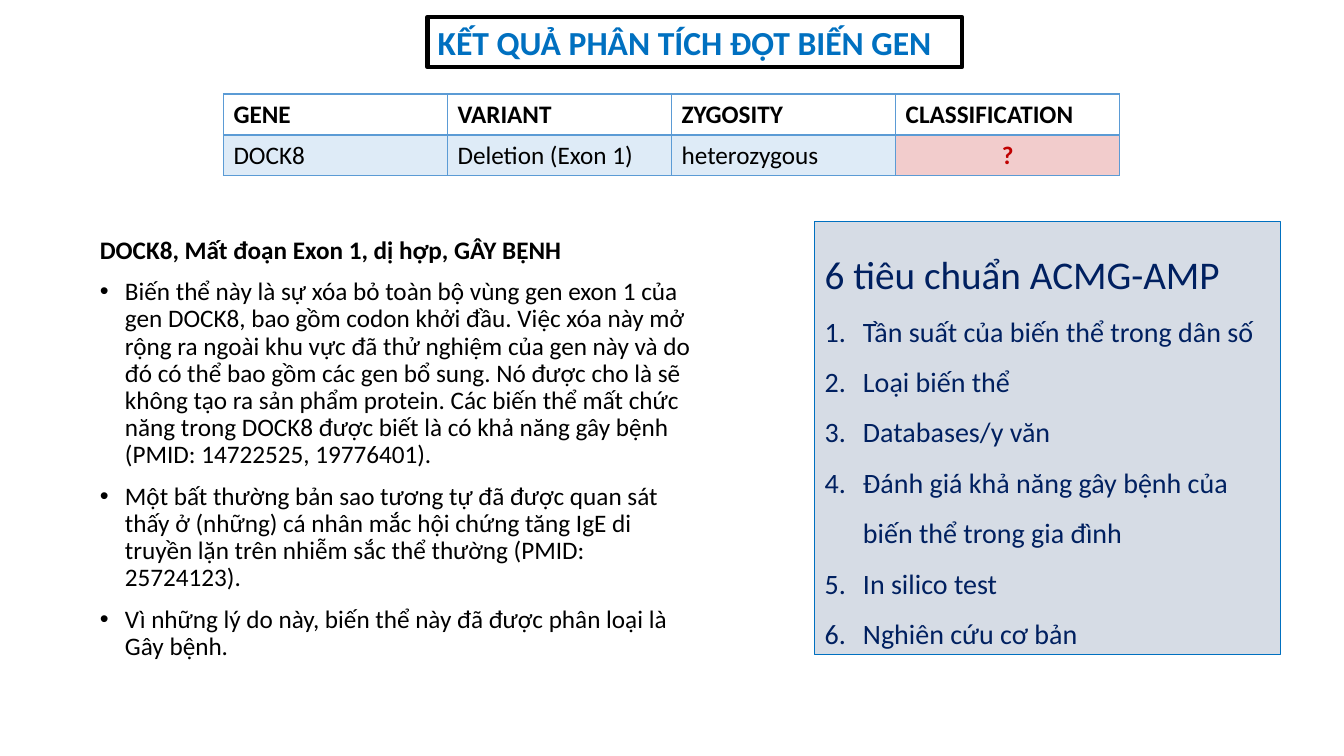
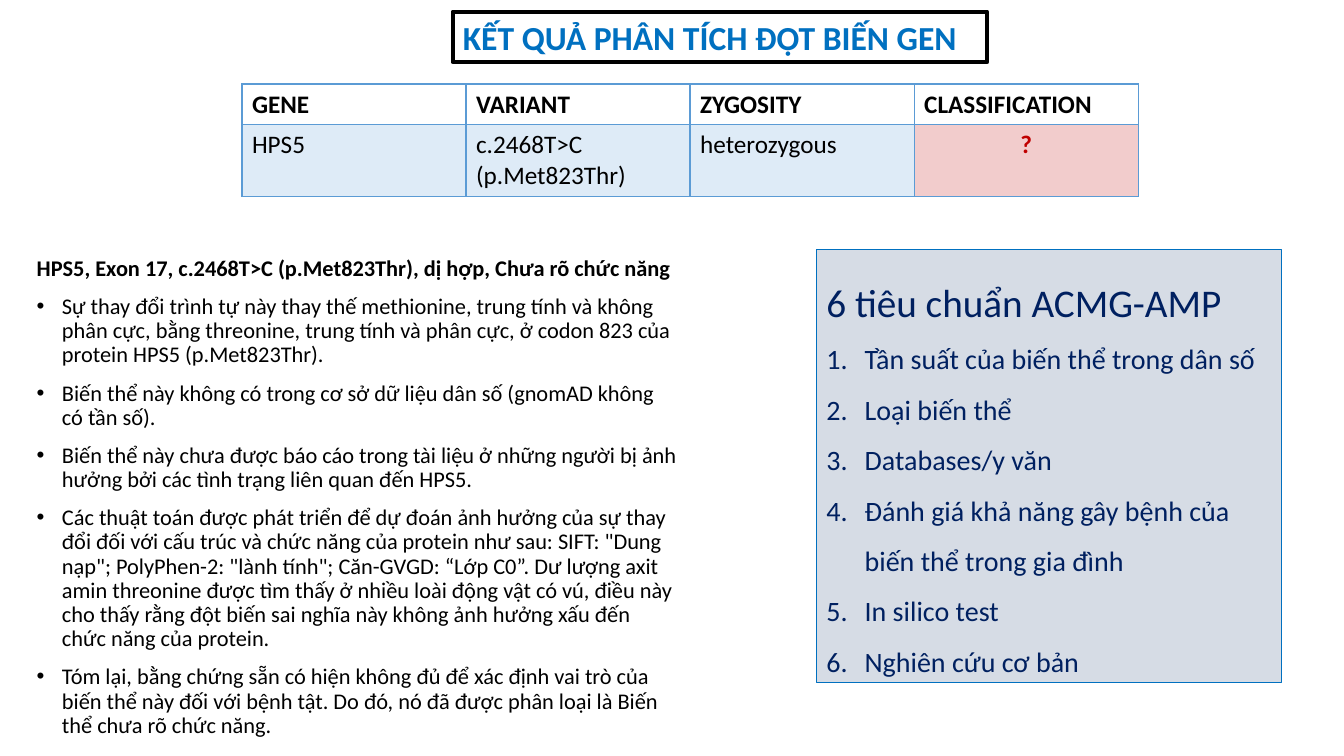
import pptx
import pptx.util
import pptx.dml.color
import pptx.enum.shapes
import pptx.enum.text
import pptx.oxml.ns
import lxml.etree

RGBColor = pptx.dml.color.RGBColor
BLACK = RGBColor(0x00, 0x00, 0x00)
BLUE = RGBColor(0x00, 0x70, 0xC0)
NAVY = RGBColor(0x00, 0x20, 0x60)
RED = RGBColor(0xC0, 0x00, 0x00)
EDGE = RGBColor(0x5B, 0x9B, 0xD5)
PALE = RGBColor(0xDE, 0xEB, 0xF7)
PINK = RGBColor(0xF2, 0xCC, 0xCC)
GREY = RGBColor(0xD6, 0xDC, 0xE5)
FONT = "Calibri"
ALIGN = pptx.enum.text.PP_ALIGN
FIT = pptx.enum.text.MSO_AUTO_SIZE
TOP = pptx.enum.text.MSO_ANCHOR.TOP

WIDE, HIGH = pptx.util.Inches(13.333), pptx.util.Inches(7.5)
COLS, ROWS = 16, 9

TITLE = "KẾT QUẢ PHÂN TÍCH ĐỘT BIẾN GEN"
HEADS = ["GENE", "VARIANT", "ZYGOSITY", "CLASSIFICATION"]
RULES = "6 tiêu chuẩn ACMG-AMP"
TESTS = [
    "Tần suất của biến thể trong dân số",
    "Loại biến thể",
    "Databases/y văn",
    "Đánh giá khả năng gây bệnh của biến thể trong gia đình",
    "In silico test",
    "Nghiên cứu cơ bản",
]
DOCK = {
    "title": (5.09, 0.2),
    "table": (2.66, 1.12),
    "rows": (0.48, 0.48),
    "cells": ["DOCK8", "Deletion (Exon 1)", "heterozygous", "?"],
    "body": (1.07, 2.77, 7.31, 5.71),
    "size": 18,
    "lead": 0.9,
    "panel": (9.7, 2.64),
    "head": "DOCK8, Mất đoạn Exon 1, dị hợp, GÂY BỆNH",
    "notes": [
        "Biến thể này là sự xóa bỏ toàn bộ vùng gen exon 1 của gen DOCK8, bao gồm codon khởi đầu. "
        "Việc xóa này mở rộng ra ngoài khu vực đã thử nghiệm của gen này và do đó có thể bao gồm "
        "các gen bổ sung. Nó được cho là sẽ không tạo ra sản phẩm protein. Các biến thể mất chức "
        "năng trong DOCK8 được biết là có khả năng gây bệnh (PMID: 14722525, 19776401).",
        "Một bất thường bản sao tương tự đã được quan sát thấy ở (những) cá nhân mắc hội chứng "
        "tăng IgE di truyền lặn trên nhiễm sắc thể thường (PMID: 25724123).",
        "Vì những lý do này, biến thể này đã được phân loại là Gây bệnh.",
    ],
}
HPS = {
    "title": (5.39, 0.14),
    "table": (2.88, 1),
    "rows": (0.48, 0.84),
    "cells": ["HPS5", "c.2468T>C (p.Met823Thr)", "heterozygous", "?"],
    "body": (0.32, 2.97, 7.87, 5.71),
    "size": 16,
    "lead": 1.0,
    "panel": (9.72, 2.97),
    "head": "HPS5, Exon 17, c.2468T>C (p.Met823Thr), dị hợp, Chưa rõ chức năng",
    "notes": [
        "Sự thay đổi trình tự này thay thế methionine, trung tính và không phân cực, bằng "
        "threonine, trung tính và phân cực, ở codon 823 của protein HPS5 (p.Met823Thr).",
        "Biến thể này không có trong cơ sở dữ liệu dân số (gnomAD không có tần số).",
        "Biến thể này chưa được báo cáo trong tài liệu ở những người bị ảnh hưởng bởi các tình "
        "trạng liên quan đến HPS5.",
        "Các thuật toán được phát triển để dự đoán ảnh hưởng của sự thay đổi đối với cấu trúc và "
        "chức năng của protein như sau: SIFT: \"Dung nạp\"; PolyPhen-2: \"lành tính\"; Căn-GVGD: "
        "“Lớp C0”. Dư lượng axit amin threonine được tìm thấy ở nhiều loài động vật có vú, điều "
        "này cho thấy rằng đột biến sai nghĩa này không ảnh hưởng xấu đến chức năng của protein.",
        "Tóm lại, bằng chứng sẵn có hiện không đủ để xác định vai trò của biến thể này đối với "
        "bệnh tật. Do đó, nó đã được phân loại là Biến thể chưa rõ chức năng.",
    ],
}


def grid(left, top, cols, rows):
    """Turn columns and rows of the grid into slide lengths."""
    across, down = WIDE / COLS, HIGH / ROWS
    return [int(n) for n in (left * across, top * down, cols * across, rows * down)]


def node(base, tag, **attrs):
    """Add a drawing element with its attributes."""
    return lxml.etree.SubElement(base, pptx.oxml.ns.qn(tag), **attrs)


def write(frame, text, size=18, color=BLACK, bold=False, align=ALIGN.LEFT,
          lead=1.0, before=0, mark=None, indent=0.25):
    """Write one paragraph in the given format."""
    para = frame.paragraphs[-1]
    if para.runs:
        para = frame.add_paragraph()
    para.alignment = align
    para.line_spacing = lead
    para.space_before = pptx.util.Pt(before)
    run = para.add_run()
    run.text = text
    font = run.font
    font.name, font.size, font.bold = FONT, pptx.util.Pt(size), bold
    font.color.rgb = color
    if mark:
        props = para._p.get_or_add_pPr()
        step = pptx.util.Inches(indent)
        props.set("marL", str(step))
        props.set("indent", str(-step))
        if mark == "1.":
            node(props, "a:buFont", typeface="+mj-lt")
            node(props, "a:buAutoNum", type="arabicPeriod")
        else:
            node(props, "a:buFont", typeface="Arial")
            node(props, "a:buChar", char=mark)


def title(slide, spot):
    """Place and frame the slide title."""
    shape = slide.shapes.title
    shape.left, shape.top, shape.width, shape.height = grid(*spot, 6.36, 0.6)
    shape.line.color.rgb = BLACK
    shape.line.width = pptx.util.Pt(3)
    frame = shape.text_frame
    frame.word_wrap, frame.auto_size = True, FIT.NONE
    frame.vertical_anchor = TOP
    write(frame, TITLE, size=24, color=BLUE, bold=True)


def border(cell):
    """Draw a thin line on each side of a cell."""
    props = cell._tc.get_or_add_tcPr()
    for side in "LRTB":
        line = node(props, "a:ln" + side, w=str(pptx.util.Pt(1)))
        fill = node(line, "a:solidFill")
        node(fill, "a:srgbClr", val=str(EDGE))


def table(slide, spot, rows, cells):
    """Add the table of the gene and its variant."""
    box = grid(*spot, 10.67, sum(rows))
    grille = slide.shapes.add_table(2, len(HEADS), *box).table
    grille.first_row = grille.horz_banding = False
    for r, line in enumerate((HEADS, cells)):
        grille.rows[r].height = grid(0, 0, 0, rows[r])[3]
        for c, text in enumerate(line):
            cell = grille.cell(r, c)
            border(cell)
            if r == 0:
                cell.fill.background()
                write(cell.text_frame, text, bold=True)
                continue
            ask = text == "?"
            cell.fill.solid()
            cell.fill.fore_color.rgb = PINK if ask else PALE
            write(cell.text_frame, text, color=RED if ask else BLACK, bold=ask,
                  align=ALIGN.CENTER if ask else ALIGN.LEFT)


def body(slide, spot, head, notes, size, lead):
    """Add the finding with its bullets."""
    frame = slide.shapes.add_textbox(*grid(*spot)).text_frame
    frame.word_wrap = True
    write(frame, head, size=size, bold=True, lead=lead, before=10)
    for note in notes:
        write(frame, note, size=size, lead=0.9, before=10, mark="•")


def panel(slide, spot):
    """Add the panel of numbered criteria."""
    kind = pptx.enum.shapes.MSO_SHAPE.RECTANGLE
    shape = slide.shapes.add_shape(kind, *grid(*spot, 5.54, 5.15))
    shape.shadow.inherit = False
    shape.fill.solid()
    shape.fill.fore_color.rgb = GREY
    shape.line.color.rgb = BLUE
    shape.line.width = pptx.util.Pt(0.75)
    frame = shape.text_frame
    frame.word_wrap, frame.auto_size = True, FIT.SHAPE_TO_FIT_TEXT
    frame.vertical_anchor = TOP
    write(frame, RULES, size=28, color=NAVY, lead=1.5)
    for test in TESTS:
        write(frame, test, size=20, color=NAVY, lead=1.5, mark="1.", indent=0.38)


def main():
    """Build both slides and save them."""
    deck = pptx.Presentation()
    deck.slide_width, deck.slide_height = WIDE, HIGH
    for case in (DOCK, HPS):
        slide = deck.slides.add_slide(deck.slide_layouts.get_by_name("Title Only"))
        title(slide, case["title"])
        table(slide, case["table"], case["rows"], case["cells"])
        body(slide, case["body"], case["head"], case["notes"], case["size"], case["lead"])
        panel(slide, case["panel"])
    deck.save("out.pptx")


if __name__ == "__main__":
    main()
